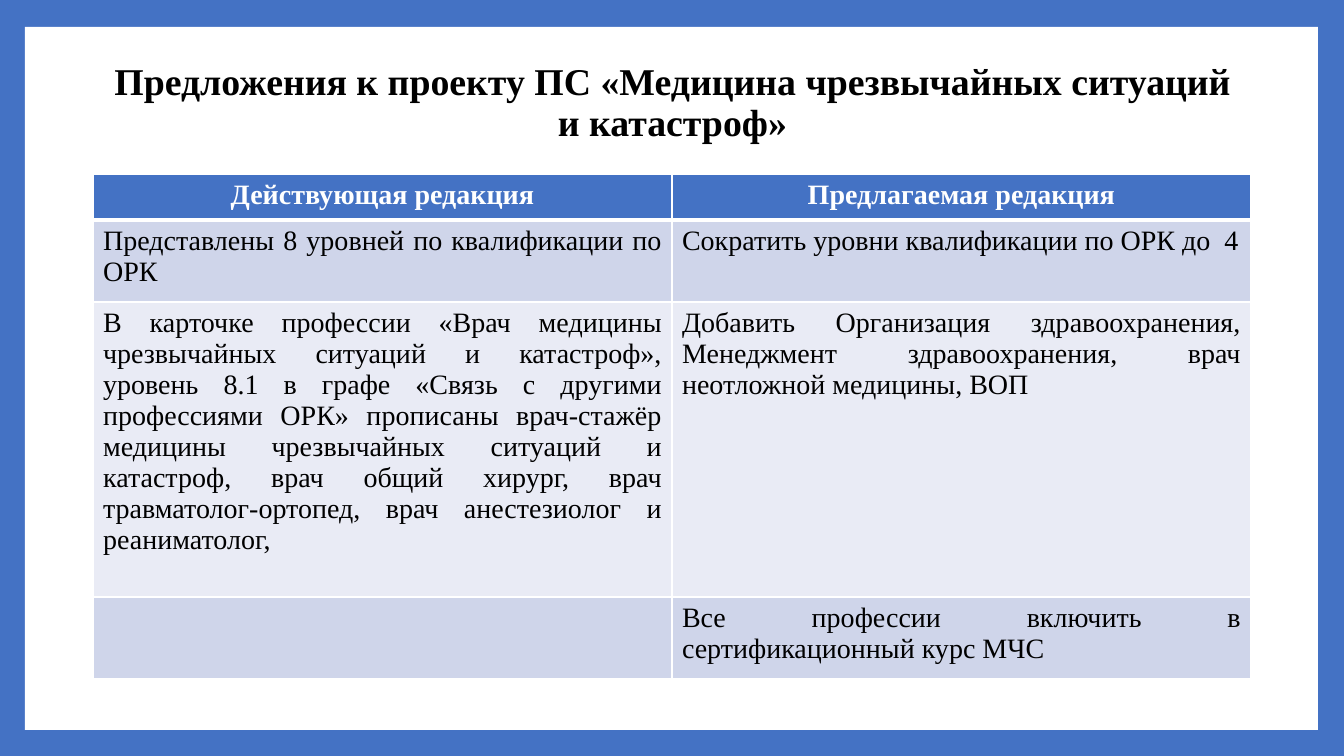
from dataclasses import dataclass

from lxml import etree
from pptx import Presentation
from pptx.dml.color import RGBColor
from pptx.enum.shapes import MSO_SHAPE
from pptx.enum.text import MSO_ANCHOR, PP_ALIGN
from pptx.oxml.ns import qn
from pptx.util import Emu, Pt

RECTANGLE = MSO_SHAPE.RECTANGLE
MIDDLE = MSO_ANCHOR.MIDDLE
CENTER, JUSTIFY = PP_ALIGN.CENTER, PP_ALIGN.JUSTIFY

EMU_PER_PX = 914400 / 100.8
BLANK_LAYOUT = 6


@dataclass(frozen=True)
class Theme:
    font: str = "Times New Roman"
    accent: str = "4472C4"
    paper: str = "FFFFFF"
    ink: str = "000000"
    bands: tuple = ("CFD5EA", "E9EBF5")
    title_size: int = 27
    table_size: int = 20
    border: int = 1
    header_border: int = 3


THEME = Theme()

TITLE = "Предложения к проекту ПС «Медицина чрезвычайных ситуаций и катастроф»"
HEADER = ("Действующая редакция", "Предлагаемая редакция")
PROPOSALS = (
    (
        "Представлены 8 уровней по квалификации по ОРК",
        "Сократить уровни квалификации по ОРК до  4",
    ),
    (
        "В карточке профессии «Врач медицины чрезвычайных ситуаций и катастроф», "
        "уровень 8.1 в графе «Связь с другими профессиями ОРК» прописаны "
        "врач-стажёр медицины чрезвычайных ситуаций и катастроф, врач общий хирург, "
        "врач травматолог-ортопед, врач анестезиолог и реаниматолог,",
        "Добавить Организация здравоохранения, Менеджмент здравоохранения, "
        "врач неотложной медицины, ВОП",
    ),
    ("", "Все профессии включить в сертификационный курс МЧС"),
)
ROW_HEIGHTS = (46, 82, 295, 82)
COLUMN_WIDTH = 579


def px(length):
    return Emu(round(length * EMU_PER_PX))


def box(left, top, width, height):
    return px(left), px(top), px(width), px(height)


def paint(fill, color):
    fill.solid()
    fill.fore_color.rgb = RGBColor.from_string(color)


def style_paragraph(paragraph, size, color, bold, alignment):
    paragraph.alignment = alignment
    font = paragraph.font
    font.name, font.size, font.bold = THEME.font, Pt(size), bold
    font.color.rgb = RGBColor.from_string(color)


def add_panel(slide):
    panel = slide.shapes.add_shape(RECTANGLE, *box(25, 27, 1293, 703))
    panel.shadow.inherit = False
    paint(panel.fill, THEME.paper)
    panel.line.fill.background()


def add_title(slide):
    frame = slide.shapes.add_textbox(*box(93, 40, 1159, 127)).text_frame
    frame.word_wrap = True
    frame.vertical_anchor = MIDDLE
    heading = frame.paragraphs[0]
    heading.text = TITLE
    heading.line_spacing = 0.9
    style_paragraph(heading, THEME.title_size, THEME.ink, True, CENTER)


def set_borders(cell, top, bottom):
    """Draw all four cell edges; top and bottom are widths in points."""
    properties = cell._tc.get_or_add_tcPr()
    widths = {"L": THEME.border, "R": THEME.border, "T": top, "B": bottom}
    for side, width in widths.items():
        edge = etree.SubElement(properties, qn(f"a:ln{side}"), w=str(Pt(width)))
        solid = etree.SubElement(edge, qn("a:solidFill"))
        etree.SubElement(solid, qn("a:srgbClr"), val=THEME.paper)


def fill_cell(cell, text, row):
    is_header = row == 0
    set_borders(
        cell,
        top=THEME.header_border if row == 1 else THEME.border,
        bottom=THEME.header_border if is_header else THEME.border,
    )
    paint(cell.fill, THEME.accent if is_header else THEME.bands[(row - 1) % 2])
    cell.text = text
    style_paragraph(
        cell.text_frame.paragraphs[0],
        THEME.table_size,
        THEME.paper if is_header else THEME.ink,
        is_header,
        CENTER if is_header else JUSTIFY,
    )


def add_proposals(slide):
    rows = (HEADER, *PROPOSALS)
    area = box(93, 174, COLUMN_WIDTH * len(HEADER), sum(ROW_HEIGHTS))
    table = slide.shapes.add_table(len(rows), len(HEADER), *area).table
    for column in table.columns:
        column.width = px(COLUMN_WIDTH)
    for row, (texts, height) in enumerate(zip(rows, ROW_HEIGHTS)):
        table.rows[row].height = px(height)
        for column, text in enumerate(texts):
            fill_cell(table.cell(row, column), text, row)


def main():
    presentation = Presentation()
    presentation.slide_width, presentation.slide_height = px(1344), px(756)
    slide = presentation.slides.add_slide(presentation.slide_layouts[BLANK_LAYOUT])
    paint(slide.background.fill, THEME.accent)
    add_panel(slide)
    add_title(slide)
    add_proposals(slide)
    presentation.save("out.pptx")


if __name__ == "__main__":
    main()
